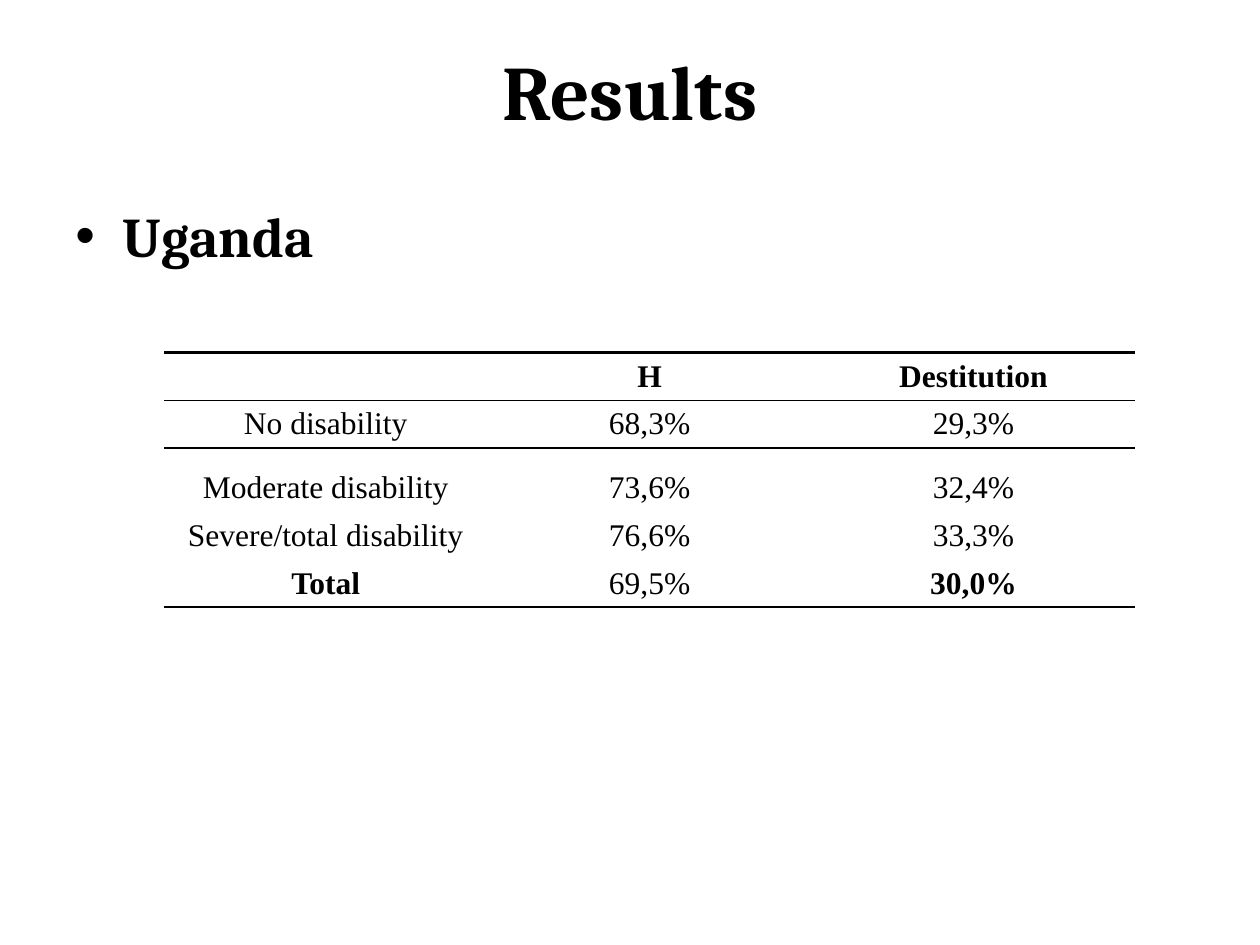
from dataclasses import dataclass

import pptx
import pptx.dml.color
import pptx.enum.text
import pptx.oxml
import pptx.oxml.ns
import pptx.util
from lxml import etree

Pt = pptx.util.Pt
ALIGN = pptx.enum.text.PP_ALIGN
ANCHOR = pptx.enum.text.MSO_ANCHOR
BLACK = pptx.dml.color.RGBColor(0, 0, 0)
WHITE = pptx.dml.color.RGBColor(255, 255, 255)
SERIF = "Cambria"
ROMAN = "Times New Roman"


@dataclass
class Entry:
    text: str
    bold: bool = False


ROWS = [
    [Entry(""), Entry("H", True), Entry("Destitution", True)],
    [Entry("No disability"), Entry("68,3%"), Entry("29,3%")],
    [Entry("Moderate disability"), Entry("73,6%"), Entry("32,4%")],
    [Entry("Severe/total disability"), Entry("76,6%"), Entry("33,3%")],
    [Entry("Total", True), Entry("69,5%"), Entry("30,0%", True)],
]
HEIGHTS = [27.2, 27.2, 36.6, 27.2, 27.2]
COL_WIDTH = 185.1
# Rule widths by row edge, counted from the top of the table
RULES = {0: 2, 1: 0.75, 2: 1, 5: 1}


def add_run(para, text: str, font: str, size: float, bold: bool) -> None:
    run = para.add_run()
    run.text = text
    run.font.name = font
    run.font.size = Pt(size)
    run.font.bold = bold
    run.font.color.rgb = BLACK


def add_box(slide, left: float, top: float, width: float, height: float):
    """Add a wrapping text box and return its first paragraph."""
    box = slide.shapes.add_textbox(Pt(left), Pt(top), Pt(width), Pt(height))
    box.text_frame.word_wrap = True
    return box.text_frame.paragraphs[0]


def add_bullet(para, indent: float) -> None:
    props = para._p.get_or_add_pPr()
    props.set("marL", str(Pt(indent)))
    props.set("indent", str(-Pt(indent)))
    font = etree.SubElement(props, pptx.oxml.ns.qn("a:buFont"))
    font.set("typeface", "Arial")
    mark = etree.SubElement(props, pptx.oxml.ns.qn("a:buChar"))
    mark.set("char", "•")


def set_edge(cell, side: str, width: float) -> None:
    """Draw one cell border, or clear it when the width is zero."""
    qn = pptx.oxml.ns.qn
    props = cell._tc.get_or_add_tcPr()
    line = etree.SubElement(props, qn("a:ln" + side))
    line.set("w", str(Pt(width)))
    if width:
        fill = etree.SubElement(line, qn("a:solidFill"))
        etree.SubElement(fill, qn("a:srgbClr")).set("val", str(BLACK))
    else:
        etree.SubElement(line, qn("a:noFill"))


def fill_cell(cell, entry: Entry, row: int) -> None:
    edges = {"L": 0, "R": 0, "T": RULES.get(row, 0), "B": RULES.get(row + 1, 0)}
    for side, width in edges.items():
        set_edge(cell, side, width)
    cell.fill.solid()
    cell.fill.fore_color.rgb = WHITE
    cell.margin_left = cell.margin_right = cell.margin_top = Pt(0.7)
    cell.margin_bottom = Pt(3.6)
    cell.vertical_anchor = ANCHOR.BOTTOM
    para = cell.text_frame.paragraphs[0]
    para.alignment = ALIGN.CENTER
    if entry.text:
        add_run(para, entry.text, ROMAN, 18, entry.bold)


def add_grid(slide, left: float, top: float) -> None:
    cols = len(ROWS[0])
    frame = slide.shapes.add_table(
        len(ROWS), cols, Pt(left), Pt(top), Pt(cols * COL_WIDTH), Pt(sum(HEIGHTS))
    )
    table = frame.table
    table.first_row = table.horz_banding = False
    for col in table.columns:
        col.width = Pt(COL_WIDTH)
    for row, (height, entries) in enumerate(zip(HEIGHTS, ROWS)):
        table.rows[row].height = Pt(height)
        for col, entry in enumerate(entries):
            fill_cell(table.cell(row, col), entry, row)


def main() -> None:
    deck = pptx.Presentation()
    deck.slide_width, deck.slide_height = Pt(720), Pt(540)
    slide = deck.slides.add_slide(deck.slide_layouts[6])

    title = add_box(slide, 36, 21.6, 648, 90)
    title.alignment = ALIGN.CENTER
    add_run(title, "Results", SERIF, 44, True)

    body = add_box(slide, 36, 111.6, 648, 356.4)
    add_bullet(body, 27)
    add_run(body, "Uganda", SERIF, 32, True)

    add_grid(slide, 93.6, 201.6)
    deck.save("out.pptx")


if __name__ == "__main__":
    main()
